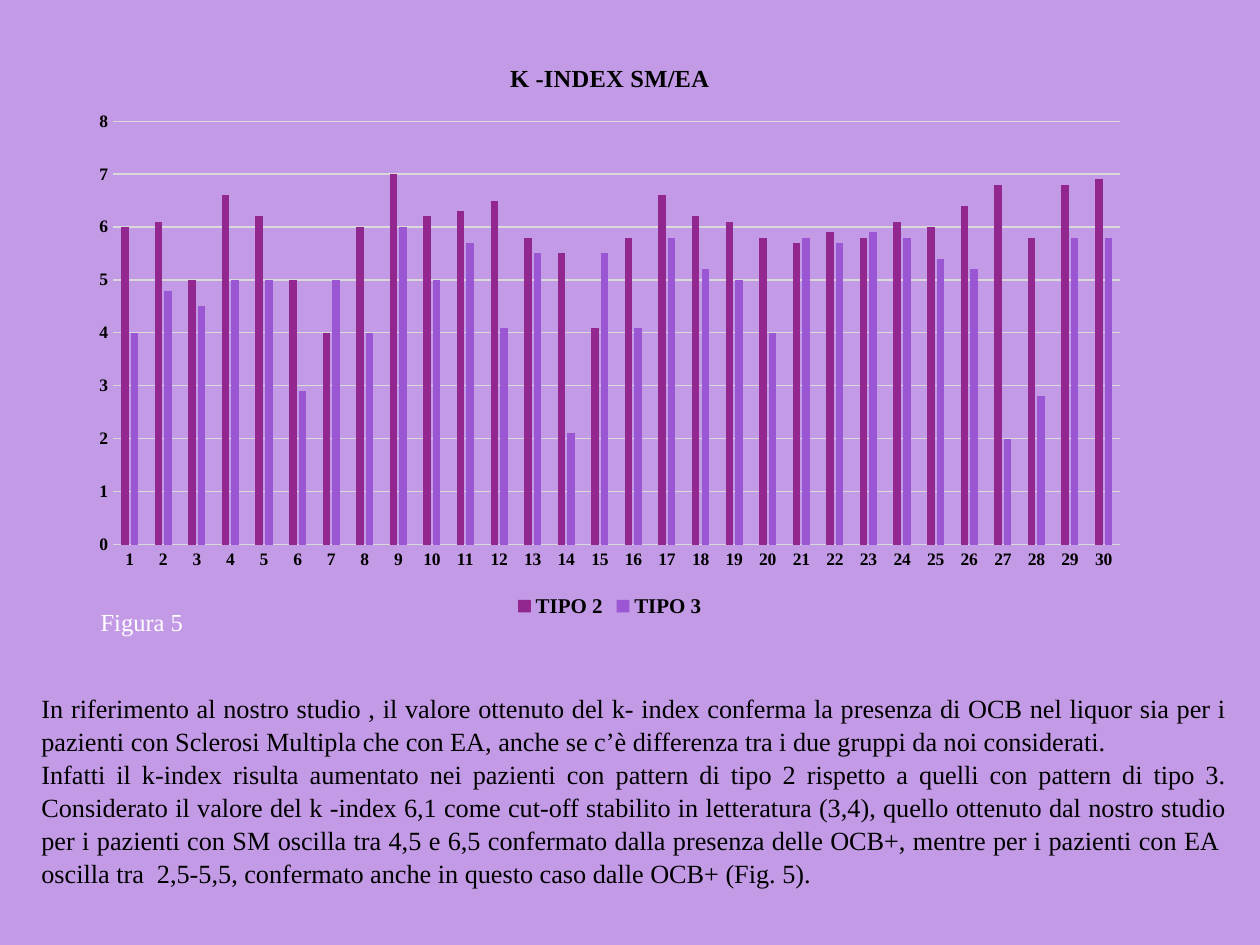
from pptx import Presentation
from pptx.chart.data import CategoryChartData
from pptx.dml.color import RGBColor
from pptx.enum.chart import XL_CHART_TYPE as ChartType, XL_LEGEND_POSITION as LegendPosition
from pptx.enum.chart import XL_TICK_MARK as TickMark
from pptx.enum.text import PP_ALIGN as Align
from pptx.util import Inches, Pt

SERIF = "Times New Roman"


def color(hex_string):
    return RGBColor.from_string(hex_string)


def add_text(slide, paragraphs, left, top, width, height, size, ink="000000",
             align=Align.LEFT, spacing=1.0, margin_top=0.05):
    box = slide.shapes.add_textbox(Inches(left), Inches(top), Inches(width), Inches(height))
    frame = box.text_frame
    frame.word_wrap = True
    frame.margin_top = Inches(margin_top)
    for index, text in enumerate(paragraphs):
        paragraph = frame.add_paragraph() if index else frame.paragraphs[0]
        paragraph.alignment = align
        paragraph.line_spacing = spacing
        run = paragraph.add_run()
        run.text = text
        run.font.name = SERIF
        run.font.size = Pt(size)
        run.font.color.rgb = color(ink)


presentation = Presentation()
presentation.slide_width = Inches(10)
presentation.slide_height = Inches(7.5)
slide = presentation.slides.add_slide(presentation.slide_layouts[6])
slide.background.fill.solid()
slide.background.fill.fore_color.rgb = color("C39AE5")

# Discussion and caption
discussion = [
    "In riferimento al nostro studio , il valore ottenuto del k- index conferma la presenza "
    "di OCB nel liquor sia per i pazienti con Sclerosi Multipla che con EA, anche se c’è "
    "differenza tra i due gruppi da noi considerati.",
    "Infatti il k-index risulta aumentato nei pazienti con pattern di tipo 2 rispetto a quelli "
    "con pattern di tipo 3. Considerato il valore del k -index 6,1 come cut-off stabilito in "
    "letteratura (3,4), quello ottenuto dal nostro studio per i pazienti con SM oscilla tra "
    "4,5 e 6,5 confermato dalla presenza delle OCB+, mentre per i pazienti con EA  oscilla "
    "tra  2,5-5,5, confermato anche in questo caso dalle OCB+ (Fig. 5).",
]
add_text(slide, discussion, 0.23, 5.18, 9.61, 2.3, size=15, align=Align.JUSTIFY,
         spacing=1.05, margin_top=0.3)
add_text(slide, ["Figura 5"], 0.7, 4.77, 1.18, 0.34, size=14, ink="FFFFFF")

# K-index chart
series_values = {
    "TIPO 2": [6, 6.1, 5, 6.6, 6.2, 5, 4, 6, 7, 6.2, 6.3, 6.5, 5.8, 5.5, 4.1,
               5.8, 6.6, 6.2, 6.1, 5.8, 5.7, 5.9, 5.8, 6.1, 6, 6.4, 6.8, 5.8, 6.8, 6.9],
    "TIPO 3": [4, 4.8, 4.5, 5, 5, 2.9, 5, 4, 6, 5, 5.7, 4.1, 5.5, 2.1, 5.5,
               4.1, 5.8, 5.2, 5, 4, 5.8, 5.7, 5.9, 5.8, 5.4, 5.2, 2, 2.8, 5.8, 5.8],
}
chart_data = CategoryChartData()
chart_data.categories = [str(number) for number in range(1, 31)]
for name, values in series_values.items():
    chart_data.add_series(name, values)
chart = slide.shapes.add_chart(ChartType.COLUMN_CLUSTERED, Inches(0.62), Inches(0.31),
                               Inches(8.44), Inches(4.63), chart_data).chart
chart.font.name = "Calibri"
chart.font.size = Pt(10)

# Bars
plot = chart.plots[0]
plot.gap_width = 219
plot.overlap = -27
plot.vary_by_categories = False
for series, fill in zip(plot.series, ["92278F", "9B57D3"]):
    series.format.fill.solid()
    series.format.fill.fore_color.rgb = color(fill)

# Axes and gridlines
category_axis, value_axis = chart.category_axis, chart.value_axis
for axis in (category_axis, value_axis):
    axis.major_tick_mark = TickMark.NONE
    axis.minor_tick_mark = TickMark.NONE
value_axis.minimum_scale = 0
value_axis.maximum_scale = 8
value_axis.major_unit = 1
value_axis.format.line.fill.background()
for line in (category_axis.format.line, value_axis.major_gridlines.format.line):
    line.color.rgb = color("D9D9D9")
    line.width = Pt(0.75)

# Title and legend
chart.has_title = True
chart.chart_title.include_in_layout = False
title_paragraph = chart.chart_title.text_frame.paragraphs[0]
title_run = title_paragraph.add_run()
title_run.text = "K -INDEX SM/EA"
chart.has_legend = True
chart.legend.position = LegendPosition.BOTTOM
chart.legend.include_in_layout = False

# Chart lettering
for font, size in [(title_run.font, 14), (chart.legend.font, 12),
                   (category_axis.tick_labels.font, 10), (value_axis.tick_labels.font, 10)]:
    font.name = SERIF
    font.size = Pt(size)
    font.bold = True
    font.color.rgb = color("000000")

presentation.save("out.pptx")
